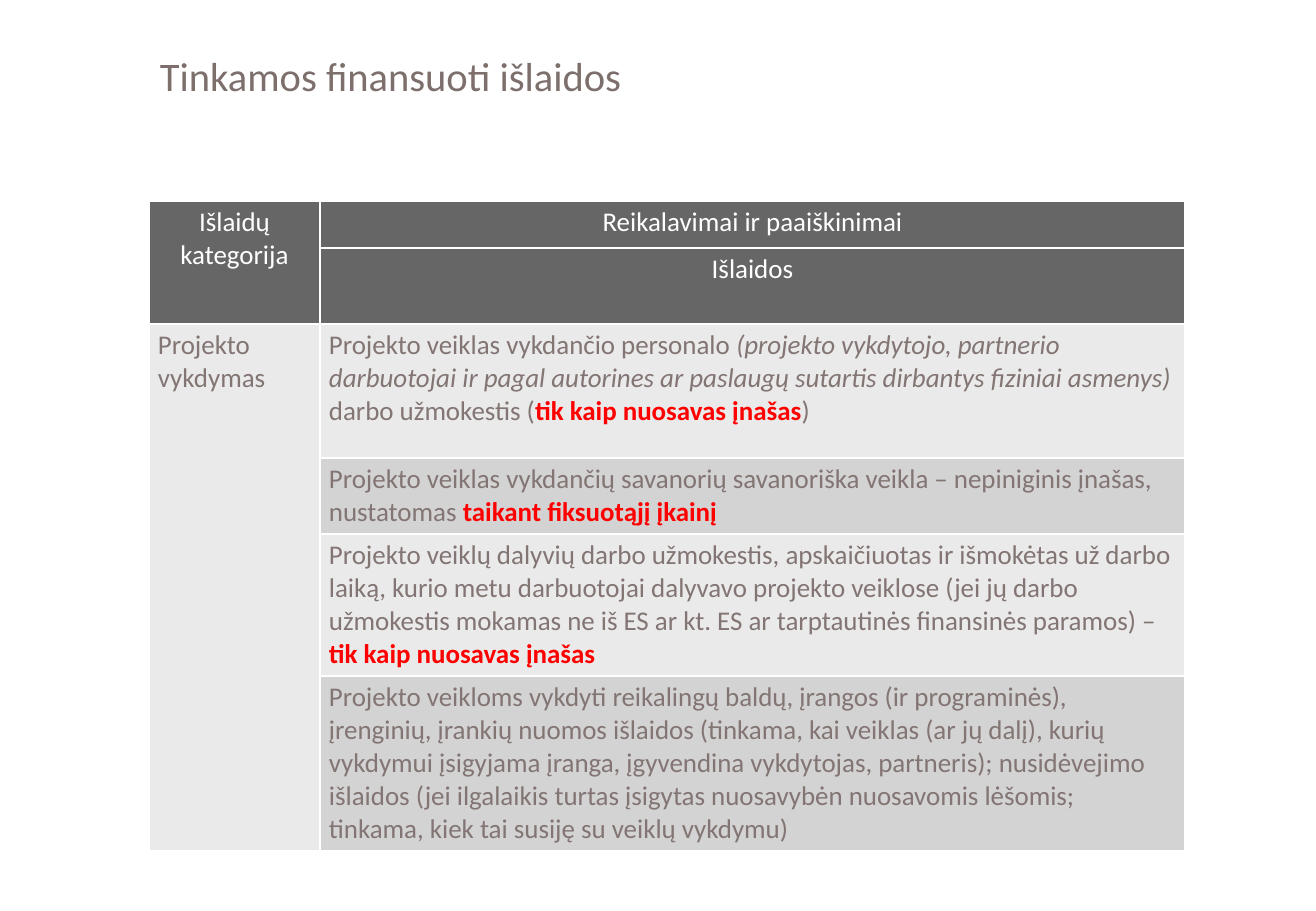
from lxml import etree
from pptx import Presentation
from pptx.dml.color import RGBColor
from pptx.enum.text import MSO_ANCHOR, PP_ALIGN
from pptx.oxml.ns import qn
from pptx.util import Pt

SCALE = 7526
CENTER, LEFT = PP_ALIGN.CENTER, PP_ALIGN.LEFT
MIDDLE = MSO_ANCHOR.MIDDLE
FONT = "Calibri"
WHITE, DARK, LIGHT, MID = "FFFFFF", "666666", "EAEAEA", "D3D3D3"
TITLE, BODY, RED = "7D6F6C", "827573", "FF0000"
ITALIC = {"italic": True}
STRONG = {"bold": True, "color": RED}
COLS = [171, 865]
ROWS = [47, 76, 134, 76, 142, 175]

HEADS = ["Reikalavimai ir paaiškinimai", "Išlaidos"]
COSTS = [
    [("Projekto veiklas vykdančio personalo ", {}),
     ("(projekto vykdytojo, partnerio darbuotojai ir pagal autorines ar "
      "paslaugų sutartis dirbantys fiziniai asmenys)", ITALIC),
     (" darbo užmokestis (", {}),
     ("tik kaip nuosavas įnašas", STRONG),
     (")", {})],
    [("Projekto veiklas vykdančių savanorių savanoriška veikla – nepiniginis "
      "įnašas, nustatomas ", {}),
     ("taikant fiksuotąjį įkainį", STRONG)],
    [("Projekto veiklų dalyvių darbo užmokestis, apskaičiuotas ir išmokėtas "
      "už darbo laiką, kurio metu darbuotojai dalyvavo projekto veiklose "
      "(jei jų darbo užmokestis mokamas ne iš ES ar kt. ES ar tarptautinės "
      "finansinės paramos) – ", {}),
     ("tik kaip nuosavas įnašas", STRONG)],
    [("Projekto veikloms vykdyti reikalingų baldų, įrangos (ir programinės), "
      "įrenginių, įrankių nuomos išlaidos (tinkama, kai veiklas (ar jų dalį), "
      "kurių vykdymui įsigyjama įranga, įgyvendina vykdytojas, partneris); "
      "nusidėvejimo išlaidos (jei ilgalaikis turtas įsigytas nuosavybėn "
      "nuosavomis lėšomis; tinkama, kiek tai susiję su veiklų vykdymu)", {})],
]


def px(*sizes):
    """Turn pixel lengths into EMU."""
    return [size * SCALE for size in sizes]


def paint(target, color):
    """Set a colour from a hex string on a font or a fill."""
    target.rgb = RGBColor.from_string(color)


def write(para, text, size=16, color=BODY, bold=False, italic=False):
    """Add one formatted run to a paragraph."""
    run = para.add_run()
    run.text = text
    font = run.font
    font.name, font.size = FONT, Pt(size)
    font.bold, font.italic = bold, italic
    paint(font.color, color)


def edge(cell):
    """Draw thin white borders on all sides of a cell."""
    props = cell._tc.get_or_add_tcPr()
    for tag in ("a:lnL", "a:lnR", "a:lnT", "a:lnB"):
        line = etree.SubElement(props, qn(tag), w=str(Pt(1)))
        fill = etree.SubElement(line, qn("a:solidFill"))
        etree.SubElement(fill, qn("a:srgbClr"), val=WHITE)


def style(cell, fill):
    """Give a cell its borders, fill and margins."""
    edge(cell)
    cell.fill.solid()
    paint(cell.fill.fore_color, fill)
    cell.margin_left, cell.margin_right = px(9, 9)
    cell.margin_top, cell.margin_bottom = px(5, 5)


def put(cell, runs, align=LEFT, **look):
    """Write runs into a cell."""
    para = cell.text_frame.paragraphs[0]
    para.alignment = align
    for text, form in runs:
        write(para, text, **{**look, **form})


def add_title(slide, text):
    """Add the slide title."""
    frame = slide.shapes.add_textbox(*px(148, 45, 1036, 66)).text_frame
    frame.word_wrap = True
    frame.vertical_anchor = MIDDLE
    para = frame.paragraphs[0]
    para.line_spacing = 0.9
    write(para, text, size=24, color=TITLE)


def add_costs(slide):
    """Add the table of cost categories and requirements."""
    box = px(149, 201, sum(COLS), sum(ROWS))
    table = slide.shapes.add_table(len(ROWS), len(COLS), *box).table
    for col, width in zip(table.columns, px(*COLS)):
        col.width = width
    for row, height in zip(table.rows, px(*ROWS)):
        row.height = height
    fills = [DARK, DARK, LIGHT, MID, LIGHT, MID]
    for row, fill in enumerate(fills):
        style(table.cell(row, 0), DARK if row < len(HEADS) else LIGHT)
        style(table.cell(row, 1), fill)
    first = len(HEADS)
    table.cell(0, 0).merge(table.cell(first - 1, 0))
    table.cell(first, 0).merge(table.cell(len(ROWS) - 1, 0))
    put(table.cell(0, 0), [("Išlaidų kategorija", {})], CENTER, color=WHITE)
    put(table.cell(first, 0), [("Projekto vykdymas", {})])
    for row, text in enumerate(HEADS):
        put(table.cell(row, 1), [(text, {})], CENTER, color=WHITE)
    for row, runs in enumerate(COSTS, first):
        put(table.cell(row, 1), runs)


def main():
    """Build and save the slide."""
    deck = Presentation()
    deck.slide_width, deck.slide_height = px(1316, 911)
    slide = deck.slides.add_slide(deck.slide_layouts[6])
    add_title(slide, "Tinkamos finansuoti išlaidos")
    add_costs(slide)
    deck.save("out.pptx")


if __name__ == "__main__":
    main()
